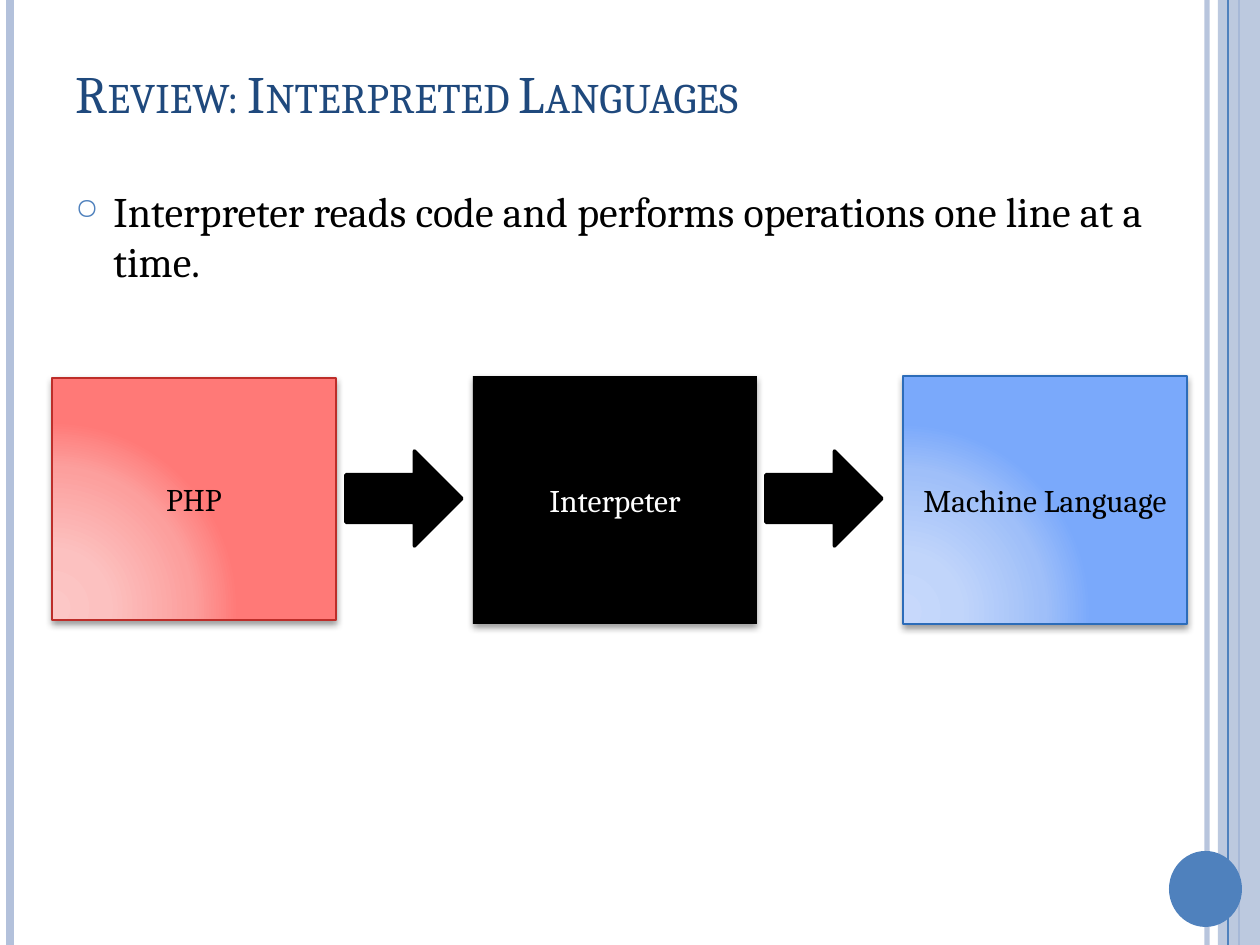
from lxml import etree
from pptx import Presentation
from pptx.dml.color import RGBColor
from pptx.enum.shapes import MSO_CONNECTOR, MSO_SHAPE
from pptx.enum.text import MSO_ANCHOR, PP_ALIGN
from pptx.oxml import parse_xml
from pptx.oxml.ns import nsdecls, qn
from pptx.util import Pt

RECT = MSO_SHAPE.RECTANGLE
OVAL = MSO_SHAPE.OVAL
ARROW = MSO_SHAPE.RIGHT_ARROW
LINE = MSO_CONNECTOR.STRAIGHT
MID = MSO_ANCHOR.MIDDLE
TOP = MSO_ANCHOR.TOP
CENTER = PP_ALIGN.CENTER
SCALE = 914400 / 126
FONT = "Cambria"
BLUE = "4F81BD"
PALE = "B3C1DB"
BLACK = "000000"


def paint(fmt, tone, alpha=100):
    fmt.solid()
    fmt.fore_color.rgb = RGBColor.from_string(tone)
    if alpha < 100:
        clr = fmt._xPr.find(".//" + qn("a:srgbClr"))
        etree.SubElement(clr, qn("a:alpha")).set("val", str(alpha * 1000))


def write(frame, text, size, tone, anchor):
    frame.word_wrap = True
    frame.vertical_anchor = anchor
    run = frame.paragraphs[0].add_run()
    run.text = text
    run.font.size = Pt(size)
    run.font.name = FONT
    paint(run.font.fill, tone)
    return run


deck = Presentation()
deck.slide_width = round(1260 * SCALE)
deck.slide_height = round(945 * SCALE)
slide = deck.slides.add_slide(deck.slide_layouts[6])
shapes = slide.shapes

rules = [
    (1207, PALE, 3, 93),
    (10, PALE, 4.5, 100),
    (1239, BLUE, 1.5, 100),
    (1228, BLUE, 0.75, 100),
]
band = (RECT, 1218, 0, 42, 945, PALE, 87)
dot = (OVAL, 1169, 851, 73, 76, BLUE, 100)
for item in rules[:3] + [band] + rules[3:] + [dot]:
    if len(item) == 4:
        x, tone, width, alpha = item
        rule = shapes.add_connector(
            LINE, round(x * SCALE), 0, round(x * SCALE), deck.slide_height)
        rule.line.width = Pt(width)
        paint(rule.line.fill, tone, alpha)
        etree.SubElement(rule._element.spPr, qn("a:effectLst"))
    else:
        kind, x, y, w, h, tone, alpha = item
        part = shapes.add_shape(kind, *[round(v * SCALE) for v in (x, y, w, h)])
        part.shadow.inherit = False
        paint(part.fill, tone, alpha)
        part.line.fill.background()

title = shapes.add_textbox(*[round(v * SCALE) for v in (63, 38, 1092, 110)])
run = write(title.text_frame, "Review: Interpreted Languages", 30, "1F497D", MID)
run._r.get_or_add_rPr().set("cap", "small")

body = shapes.add_textbox(*[round(v * SCALE) for v in (63, 179, 1092, 189)])
write(body.text_frame,
      "Interpreter reads code and performs operations one line at a time.",
      24, BLACK, TOP)
para = body.text_frame.paragraphs[0]
para.space_before = Pt(6)
props = para._p.get_or_add_pPr()
indent = round(38 * SCALE)
props.set("marL", str(indent))
props.set("indent", str(-indent))
color = etree.SubElement(props, qn("a:buClr"))
etree.SubElement(color, qn("a:srgbClr")).set("val", BLUE)
etree.SubElement(props, qn("a:buSzPct")).set("val", "70000")
etree.SubElement(props, qn("a:buChar")).set("char", "○")

reds = ["FCC7C6", "FCC1C0", "FC9F9D", "FF7977"]
blues = ["C7D8FB", "C1D5FA", "9FBFF9", "7AA9FB"]
boxes = [
    ("PHP", 52, 378, 242, reds, "BD2D29", BLACK),
    ("Interpeter", 473, 376, 248, None, None, "FFFFFF"),
    ("Machine Language", 903, 376, 248, blues, "2C6CB9", BLACK),
]
for text, x, y, h, tones, edge, ink in boxes:
    box = shapes.add_shape(RECT, *[round(v * SCALE) for v in (x, y, 284, h)])
    box.shadow.inherit = False
    props = box._element.spPr
    if tones:
        box.line.width = Pt(1)
        paint(box.line.fill, edge)
        stops = "".join(
            f'<a:gs pos="{pos * 1000}"><a:srgbClr val="{tone}"/></a:gs>'
            for pos, tone in zip((0, 30, 75, 100), tones))
        props.insert(2, parse_xml(
            f'<a:gradFill {nsdecls("a")} rotWithShape="1">'
            f'<a:gsLst>{stops}</a:gsLst><a:path path="circle">'
            '<a:fillToRect l="5000" t="100000" r="120000" b="10000"/>'
            '</a:path></a:gradFill>'))
    else:
        paint(box.fill, BLACK)
        box.line.fill.background()
    props.find(qn("a:effectLst")).append(parse_xml(
        f'<a:outerShdw {nsdecls("a")} blurRad="{Pt(4)}" dist="{Pt(2)}" '
        'dir="5400000" rotWithShape="0"><a:srgbClr val="000000">'
        '<a:alpha val="40000"/></a:srgbClr></a:outerShdw>'))
    write(box.text_frame, text, 18, ink, MID)
    box.text_frame.paragraphs[0].alignment = CENTER

for x in (346, 766):
    arrow = shapes.add_shape(ARROW, *[round(v * SCALE) for v in (x, 451, 116, 95)])
    arrow.shadow.inherit = False
    paint(arrow.fill, BLACK)
    arrow.line.width = Pt(2)
    paint(arrow.line.fill, BLACK)

deck.save("out.pptx")
